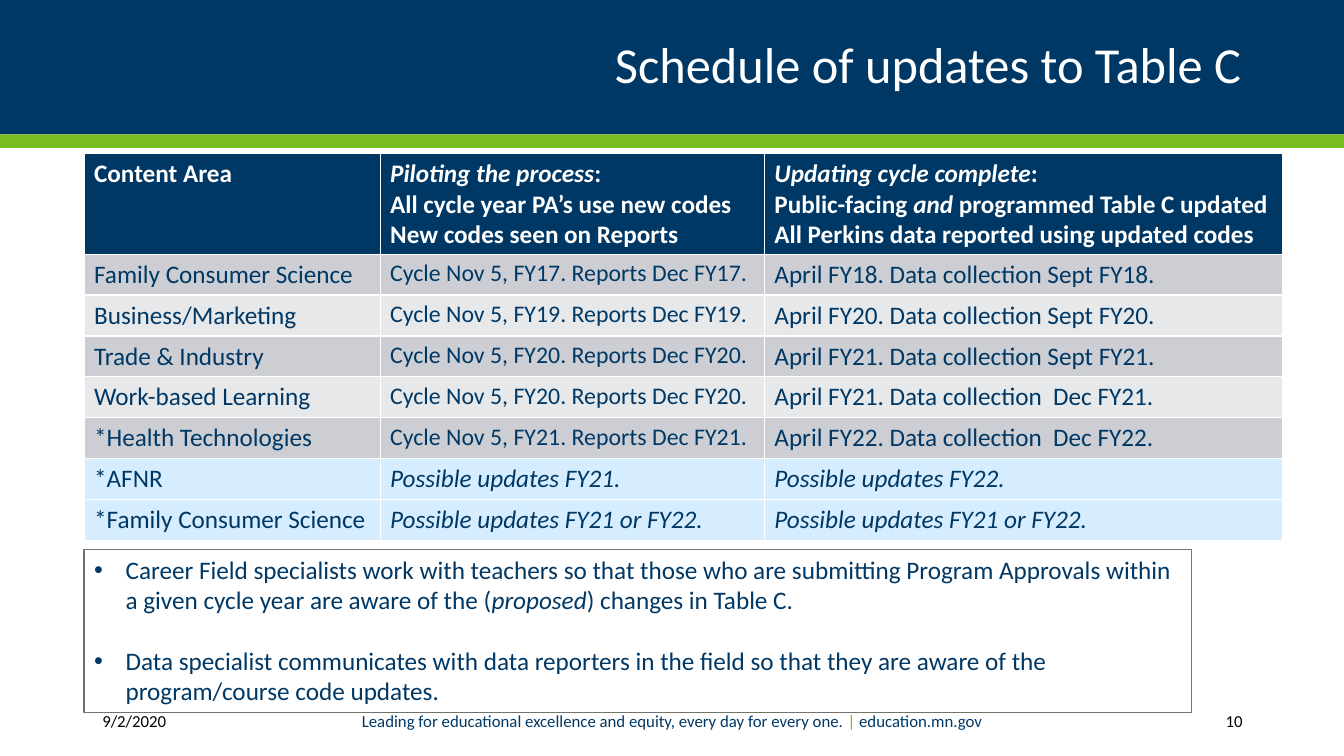
"""Build the slide that schedules the updates to Table C."""
from dataclasses import dataclass, replace
from typing import Optional

from lxml.etree import SubElement
from pptx import Presentation
from pptx.dml.color import RGBColor
from pptx.enum.shapes import MSO_SHAPE
from pptx.enum.text import MSO_ANCHOR, MSO_AUTO_SIZE, PP_ALIGN
from pptx.oxml.ns import qn
from pptx.util import Pt

EMU_PER_PX = 9525
FONT = "Calibri"
COLORS = {
    "navy": "003865",
    "green": "78BE21",
    "white": "FFFFFF",
    "black": "000000",
    "outline": "727269",
    "band_dark": "CCCED3",
    "band_light": "E7E8EA",
    "possible": "D6EDFF",
}


@dataclass(frozen=True)
class Box:
    left: int
    top: int
    width: int
    height: int


@dataclass(frozen=True)
class Style:
    """Text look; parts between underscores are italic or in the accent colour."""
    size: int
    color: str = "navy"
    bold: bool = False
    accent: Optional[str] = None
    align: PP_ALIGN = PP_ALIGN.LEFT


@dataclass(frozen=True)
class Band:
    box: Box
    color: str


@dataclass(frozen=True)
class FooterText:
    box: Box
    text: str
    style: Style


@dataclass(frozen=True)
class Row:
    cells: tuple[str, str, str]
    fill: str
    pilot_size: int = 17


SLIDE_SIZE = (1280, 720)
BANDS = [
    Band(Box(0, 0, 1280, 128), "navy"),
    Band(Box(0, 128, 1280, 13), "green"),
]
TITLE_BOX = Box(88, 16, 1104, 96)
TITLE_STYLE = Style(36, "white", align=PP_ALIGN.RIGHT)

SMALL = Style(12, "black")
FOOTER_TEXTS = [
    FooterText(Box(88, 667, 143, 38), "9/2/2020", SMALL),
    FooterText(Box(1039, 667, 154, 38), "10", replace(SMALL, align=PP_ALIGN.RIGHT)),
    FooterText(
        Box(303, 667, 674, 38),
        "Leading for educational excellence and equity, every day for every one. _| _education.mn.gov",
        Style(12, accent="green", align=PP_ALIGN.CENTER),
    ),
]

COLUMN_WIDTHS = [282, 366, 494]
HEADER_HEIGHT, ROW_HEIGHT = 96, 39
HEADER_STYLE = Style(18, "white", bold=True)
HEADERS = [
    ["Content Area"],
    ["_Piloting the process_:", "All cycle year PA’s use new codes New codes seen on Reports"],
    [
        "_Updating cycle complete_:",
        "Public-facing _and_ programmed Table C updated",
        "All Perkins data reported using updated codes",
    ],
]
ROWS = [
    Row(("Family Consumer Science", "Cycle Nov 5, FY17. Reports Dec FY17.",
         "April FY18. Data collection Sept FY18."), "band_dark"),
    Row(("Business/Marketing", "Cycle Nov 5, FY19. Reports Dec FY19.",
         "April FY20. Data collection Sept FY20."), "band_light"),
    Row(("Trade & Industry", "Cycle Nov 5, FY20. Reports Dec FY20.",
         "April FY21. Data collection Sept FY21."), "band_dark"),
    Row(("Work-based Learning", "Cycle Nov 5, FY20. Reports Dec FY20.",
         "April FY21. Data collection  Dec FY21."), "band_light"),
    Row(("*Health Technologies", "Cycle Nov 5, FY21. Reports Dec FY21.",
         "April FY22. Data collection  Dec FY22."), "band_dark"),
    Row(("*AFNR", "_Possible updates FY21._", "_Possible updates FY22._"), "possible", 18),
    Row(("*Family Consumer Science", "_Possible updates FY21 or FY22._",
         "_Possible updates FY21 or FY22._"), "possible", 18),
]
TABLE_BOX = Box(80, 146, sum(COLUMN_WIDTHS), HEADER_HEIGHT + ROW_HEIGHT * len(ROWS))

NOTES_BOX = Box(80, 523, 1055, 156)
BULLET_INDENT = 30
NOTES = [
    "Career Field specialists work with teachers so that those who are submitting Program Approvals "
    "within a given cycle year are aware of the (_proposed_) changes in Table C.",
    "Data specialist communicates with data reporters in the field so that they are aware of the "
    "program/course code updates.",
]


def px(value: int) -> int:
    return value * EMU_PER_PX


def emu(box: Box) -> tuple[int, int, int, int]:
    return px(box.left), px(box.top), px(box.width), px(box.height)


def color(name: str) -> RGBColor:
    return RGBColor.from_string(COLORS[name])


def place(shape, box: Box) -> None:
    shape.left, shape.top, shape.width, shape.height = emu(box)


def write(text_frame, lines: list[str], style: Style) -> None:
    text_frame.text = "\n".join(line.replace("_", "") for line in lines)
    for paragraph, line in zip(text_frame.paragraphs, lines):
        paragraph.clear()
        paragraph.alignment = style.align
        for index, part in enumerate(line.split("_")):
            if not part:
                continue
            marked = index % 2 == 1
            run = paragraph.add_run()
            run.text = part
            run.font.name = FONT
            run.font.size = Pt(style.size)
            run.font.bold = style.bold
            run.font.italic = marked and style.accent is None
            run.font.color.rgb = color(style.accent if marked and style.accent else style.color)


def draw_band(slide, band: Band) -> None:
    shape = slide.shapes.add_shape(MSO_SHAPE.RECTANGLE, *emu(band.box))
    shape.shadow.inherit = False
    shape.fill.solid()
    shape.fill.fore_color.rgb = color(band.color)
    shape.line.fill.background()


def draw_title(title) -> None:
    place(title, TITLE_BOX)
    write(title.text_frame, ["Schedule of updates to Table C"], TITLE_STYLE)
    title.text_frame.vertical_anchor = MSO_ANCHOR.MIDDLE
    title.text_frame.paragraphs[0].line_spacing = 0.9


def draw_footer_text(slide, footer: FooterText) -> None:
    text_frame = slide.shapes.add_textbox(*emu(footer.box)).text_frame
    text_frame.word_wrap = True
    text_frame.vertical_anchor = MSO_ANCHOR.MIDDLE
    write(text_frame, [footer.text], footer.style)


def fill_cell(cell, lines: list[str], style: Style, fill: str) -> None:
    cell.fill.solid()
    cell.fill.fore_color.rgb = color(fill)
    write(cell.text_frame, lines, style)


def draw_schedule(slide) -> None:
    table = slide.shapes.add_table(len(ROWS) + 1, len(COLUMN_WIDTHS), *emu(TABLE_BOX)).table
    for column, width in zip(table.columns, COLUMN_WIDTHS):
        column.width = px(width)
    for index, row in enumerate(table.rows):
        row.height = px(ROW_HEIGHT if index else HEADER_HEIGHT)
    for column_index, lines in enumerate(HEADERS):
        fill_cell(table.cell(0, column_index), lines, HEADER_STYLE, "navy")
    for row_index, row in enumerate(ROWS, start=1):
        for column_index, text in enumerate(row.cells):
            size = row.pilot_size if column_index == 1 else 18
            fill_cell(table.cell(row_index, column_index), [text], Style(size), row.fill)


def draw_notes(body) -> None:
    place(body, NOTES_BOX)
    body.line.color.rgb = color("outline")
    body.line.width = Pt(0.75)
    text_frame = body.text_frame
    text_frame.auto_size = MSO_AUTO_SIZE.NONE
    text_frame.vertical_anchor = MSO_ANCHOR.TOP
    write(text_frame, NOTES, Style(18))
    for index, paragraph in enumerate(text_frame.paragraphs):
        paragraph.space_before = Pt(22 if index else 0)
        properties = paragraph._p.get_or_add_pPr()
        properties.set("marL", str(px(BULLET_INDENT)))
        properties.set("indent", str(-px(BULLET_INDENT)))
        SubElement(properties, qn("a:buFont"), typeface="Arial")
        SubElement(properties, qn("a:buChar"), char="•")


def main() -> None:
    presentation = Presentation()
    presentation.slide_width, presentation.slide_height = map(px, SLIDE_SIZE)
    slide = presentation.slides.add_slide(presentation.slide_layouts[1])
    title, body = slide.placeholders
    for band in BANDS:
        draw_band(slide, band)
    draw_title(title)
    slide.shapes._spTree.append(title._element)
    for footer in FOOTER_TEXTS:
        draw_footer_text(slide, footer)
    draw_schedule(slide)
    draw_notes(body)
    slide.shapes._spTree.append(body._element)
    presentation.save("out.pptx")


if __name__ == "__main__":
    main()
